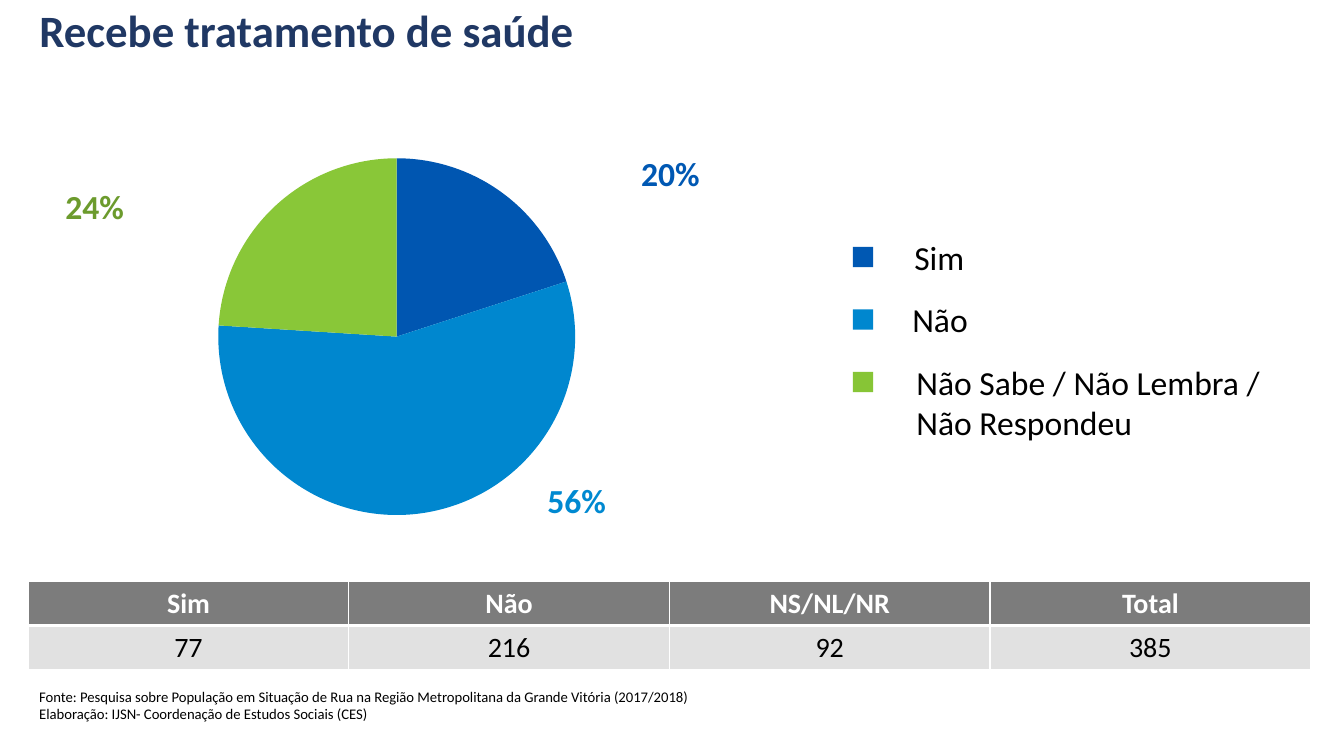
from lxml import etree
from pptx import Presentation
from pptx.chart.data import CategoryChartData
from pptx.dml.color import RGBColor
from pptx.enum.chart import XL_CHART_TYPE
from pptx.enum.shapes import MSO_SHAPE
from pptx.enum.text import MSO_ANCHOR, PP_ALIGN
from pptx.oxml import parse_xml
from pptx.oxml.ns import nsdecls, qn
from pptx.util import Inches, Pt

NAVY = RGBColor(0x20, 0x38, 0x64)
BLUE = RGBColor(0x00, 0x56, 0xB1)
LABEL_BLUE = RGBColor(0x00, 0x58, 0xB3)
SKY = RGBColor(0x00, 0x87, 0xCF)
LABEL_SKY = RGBColor(0x00, 0x89, 0xD1)
GREEN = RGBColor(0x89, 0xC7, 0x38)
KEY_GREEN = RGBColor(0x87, 0xC5, 0x36)
LABEL_GREEN = RGBColor(0x6C, 0x9B, 0x2D)
HEADER_GRAY = RGBColor(0x7C, 0x7C, 0x7C)
ROW_GRAY = RGBColor(0xE1, 0xE1, 0xE1)
WHITE = RGBColor(0xFF, 0xFF, 0xFF)
BLACK = RGBColor(0x00, 0x00, 0x00)
FONT = "Calibri"


def write(frame, text, size=24, color=BLACK, bold=False,
          align=PP_ALIGN.LEFT, anchor=MSO_ANCHOR.TOP, wrap=False):
    frame.text = text
    frame.word_wrap = wrap
    frame.vertical_anchor = anchor
    for paragraph in frame.paragraphs:
        paragraph.alignment = align
        for run in paragraph.runs:
            run.font.name = FONT
            run.font.size = Pt(size)
            run.font.bold = bold
            run.font.color.rgb = color


def add_border(cell, side, points):
    """Draw a white line on one side (L, R, T or B); call before filling the cell."""
    cell._tc.get_or_add_tcPr().append(parse_xml(
        f'<a:ln{side} {nsdecls("a")} w="{Pt(points)}"><a:solidFill>'
        f'<a:srgbClr val="{WHITE}"/></a:solidFill></a:ln{side}>'))


presentation = Presentation()
presentation.slide_width = Inches(13.33)
presentation.slide_height = Inches(7.5)
slide = presentation.slides.add_slide(presentation.slide_layouts[5])
shapes = slide.shapes

title = shapes.title
title.left, title.top = Inches(0.29), Inches(0.03)
title.width, title.height = Inches(12.72), Inches(0.62)
write(title.text_frame, "Recebe tratamento de saúde", size=32, color=NAVY,
      bold=True, anchor=MSO_ANCHOR.MIDDLE, wrap=True)
title.text_frame.paragraphs[0].line_spacing = 0.8

# Pie chart filling its whole frame
chart_data = CategoryChartData()
chart_data.categories = ["1", "2", "3"]
chart_data.add_series("Series 1", (20, 56, 24))
chart = shapes.add_chart(XL_CHART_TYPE.PIE, Inches(0), Inches(1.57),
                         Inches(7.87), Inches(3.54), chart_data).chart
chart.has_legend = False
chart.has_title = False
chart.font.name = FONT
chart.font.size = Pt(10)
chart.font.color.rgb = BLACK
plot = chart.plots[0]
plot.vary_by_categories = True
for index, color in enumerate((BLUE, SKY, GREEN)):
    point_format = plot.series[0].points[index].format
    point_format.fill.solid()
    point_format.fill.fore_color.rgb = color
    point_format.line.fill.background()

plot_area = chart._chartSpace.chart.plotArea
for old_layout in plot_area.findall(qn("c:layout")):
    plot_area.remove(old_layout)
layout = etree.Element(qn("c:layout"))
manual_layout = etree.SubElement(layout, qn("c:manualLayout"))
for tag, value in (("layoutTarget", "inner"), ("xMode", "edge"), ("yMode", "edge"),
                   ("x", "0"), ("y", "0"), ("w", "1"), ("h", "1")):
    etree.SubElement(manual_layout, qn(f"c:{tag}")).set("val", value)
plot_area.insert(0, layout)

# Percentages around the pie
for text, left, top, color in (("24%", 0.55, 1.8, LABEL_GREEN),
                               ("56%", 5.33, 4.71, LABEL_SKY),
                               ("20%", 6.26, 1.47, LABEL_BLUE)):
    label = shapes.add_textbox(Inches(left), Inches(top), Inches(0.79), Inches(0.5))
    write(label.text_frame, text, color=color, bold=True)

# Legend
legend = (("Sim", 8.97, 0.7, 0.5, LABEL_BLUE),
          ("Não", 8.95, 0.76, 0.5, SKY),
          ("Não Sabe / Não Lembra /\nNão Respondeu", 8.99, 3.64, 0.91, KEY_GREEN))
for index, (text, left, width, height, color) in enumerate(legend):
    top = 2.3 + 0.62 * index
    key = shapes.add_shape(MSO_SHAPE.RECTANGLE, Inches(8.46), Inches(top + 0.15),
                           Inches(0.2), Inches(0.2))
    key.shadow.inherit = False
    key.fill.solid()
    key.fill.fore_color.rgb = color
    key.line.fill.background()
    entry = shapes.add_textbox(Inches(left), Inches(top), Inches(width), Inches(height))
    write(entry.text_frame, text)

# Table of counts
rows = (("Sim", "Não", "NS/NL/NR", "Total"), ("77", "216", "92", "385"))
table = shapes.add_table(2, 4, Inches(0.28), Inches(5.77),
                         Inches(12.72), Inches(0.87)).table
for row_index, values in enumerate(rows):
    is_header = row_index == 0
    for column_index, value in enumerate(values):
        cell = table.cell(row_index, column_index)
        for side, points in (("L", 1), ("R", 1), ("T", 1 if is_header else 3),
                             ("B", 3 if is_header else 1)):
            add_border(cell, side, points)
        cell.fill.solid()
        cell.fill.fore_color.rgb = HEADER_GRAY if is_header else ROW_GRAY
        write(cell.text_frame, value, size=20, color=WHITE if is_header else BLACK,
              bold=is_header, align=PP_ALIGN.CENTER, wrap=True)

source = shapes.add_textbox(Inches(0.29), Inches(6.64), Inches(12.72), Inches(0.58))
write(source.text_frame,
      "Fonte: Pesquisa sobre População em Situação de Rua na Região Metropolitana "
      "da Grande Vitória (2017/2018)\n"
      "Elaboração: IJSN- Coordenação de Estudos Sociais (CES)",
      size=10.5, anchor=MSO_ANCHOR.BOTTOM, wrap=True)

presentation.save("out.pptx")
